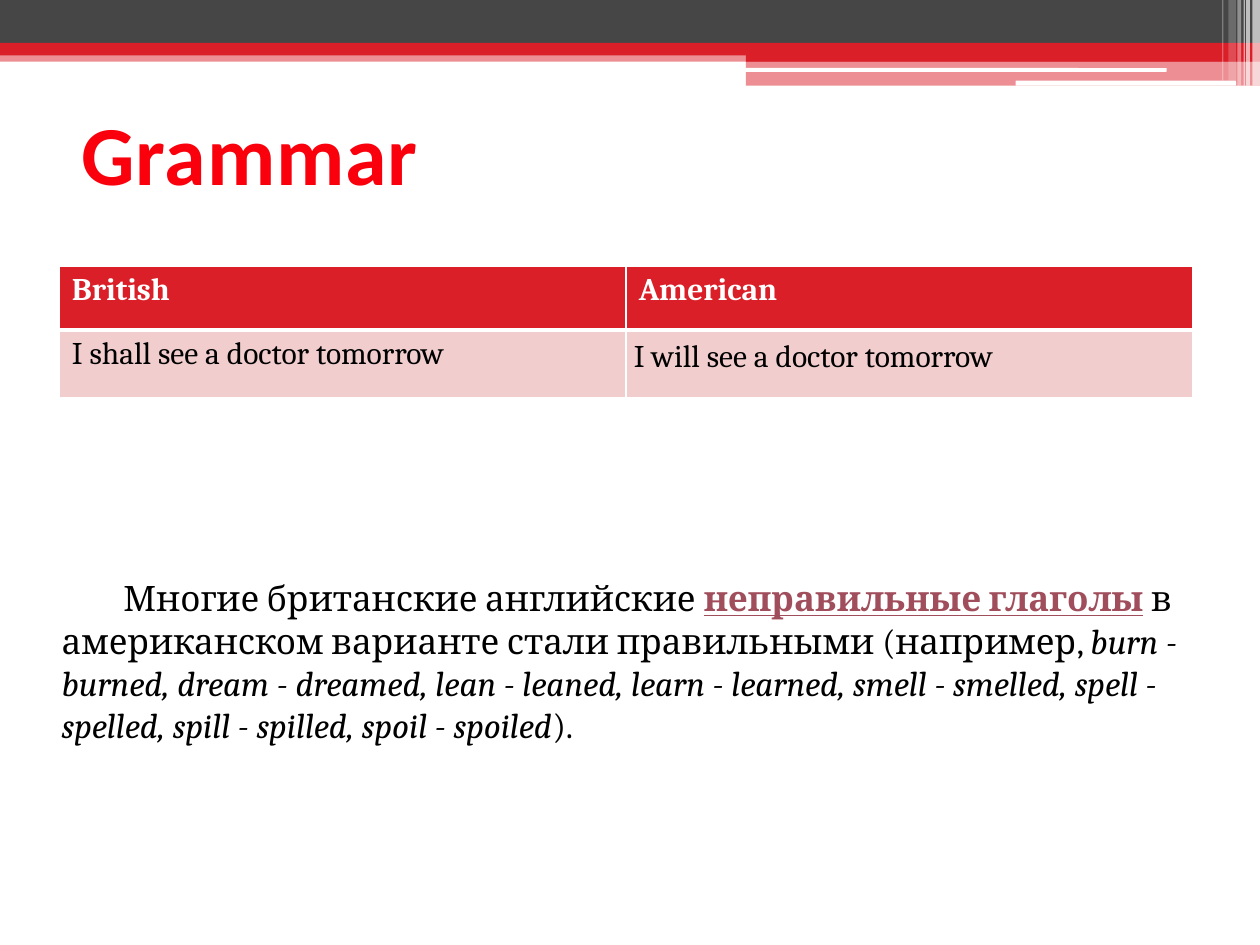
from pptx import Presentation, util as u
from pptx.dml.color import RGBColor
from pptx.enum import shapes, text
from pptx.oxml import parse_xml
from pptx.oxml.ns import nsdecls
from lxml import etree

RED, GREY, WHITE, BLACK, PINK = "DA1F28", "464646", "FFFFFF", "000000", "F1CDCD"
W, H = 10, 7.5

# Header bands: left, top, width, height, colour, opacity %
BANDS = [
    (0, 0.4, W, 0.09, RED, 50),
    (0, 0, W, 0.34, GREY, 100),
    (0, 0.34, W, 0.1, RED, 100),
    (5.92, 0.39, 4.08, 0.1, RED, 100),
    (5.92, 0.48, 4.08, 0.2, RED, 50),
]
# Rounded white rules: left, top, width, height
RULES = [(5.91, 0.54, 3.35, 0.03), (8.06, 0.64, 1.75, 0.04)]
# White stripes at the right edge: left, width, height, opacity %
STRIPES = [
    (9.94, 0.06, 0.68, 65), (9.89, 0.03, 0.68, 65), (9.87, 0.01, 0.68, 60),
    (9.82, 0.03, 0.68, 40), (9.75, 0.06, 0.64, 20), (9.7, 0.01, 0.64, 30),
]
TITLE = "Grammar"
ROWS = [
    ("British", "American"),
    ("I shall see a doctor tomorrow", "I will see a doctor tomorrow"),
]
# Runs of the note: text, colour, bold and underlined, italic
NOTE = [
    ("Многие британские английские ", BLACK, False, False),
    ("неправильные глаголы", "A14E5C", True, False),
    (" в американском варианте стали правильными (например, ", BLACK, False, False),
    ("burn - burned, dream - dreamed, lean - leaned, learn - learned, "
     "smell - smelled, spell - spelled, spill - spilled, spoil - spoiled",
     BLACK, False, True),
    (").", BLACK, False, False),
]

prs = Presentation()
prs.slide_width, prs.slide_height = u.Inches(W), u.Inches(H)
slide = prs.slides.add_slide(prs.slide_layouts[6])


def rgb(code):
    return RGBColor.from_string(code)


def box(*dims):
    return [u.Inches(d) for d in dims]


def bar(dims, code, alpha=100, kind=shapes.MSO_SHAPE.RECTANGLE):
    shape = slide.shapes.add_shape(kind, *box(*dims))
    shape.shadow.inherit = False
    shape.line.fill.background()
    shape.fill.solid()
    shape.fill.fore_color.rgb = rgb(code)
    if alpha < 100:
        color = shape.fill._xPr.find(".//{*}srgbClr")
        color.append(parse_xml(f'<a:alpha {nsdecls("a")} val="{alpha * 1000}"/>'))


def style(font, name, size, code, bold=False):
    font.name, font.size, font.bold = name, u.Pt(size), bold
    font.color.rgb = rgb(code)


def edge(cell, bottom):
    props = cell._tc.get_or_add_tcPr()
    for side in "LRTB":
        width = u.Pt(bottom if side == "B" else 1)
        props.append(parse_xml(
            f'<a:ln{side} {nsdecls("a")} w="{width}"><a:solidFill>'
            f'<a:srgbClr val="{WHITE}"/></a:solidFill></a:ln{side}>'))


def label(dims, anchor):
    frame = slide.shapes.add_textbox(*box(*dims)).text_frame
    frame.word_wrap = True
    frame.vertical_anchor = anchor
    return frame.paragraphs[0]


# Header decoration
for *dims, code, alpha in BANDS:
    bar(dims, code, alpha)
for dims in RULES:
    bar(dims, WHITE, kind=shapes.MSO_SHAPE.ROUNDED_RECTANGLE)
for left, wide, high, alpha in STRIPES:
    bar((left, 0, wide, high), WHITE, alpha)

# Title
head = label((0.55, 0.62, 9, 1.17), text.MSO_ANCHOR.MIDDLE)
head.text = TITLE
style(head.font, "Calibri", 48, "F9000C", True)
head.runs[0].font._element.set("spc", "50")

# Comparison table
table = slide.shapes.add_table(2, 2, *box(0.47, 2.11, 9, 1.05)).table
for row, high in zip(table.rows, (0.51, 0.54)):
    row.height = u.Inches(high)
for r, row in enumerate(ROWS):
    for c, words in enumerate(row):
        cell = table.cell(r, c)
        edge(cell, 1 if r else 3)
        cell.fill.solid()
        cell.fill.fore_color.rgb = rgb(PINK if r else RED)
        cell.text = words
        style(cell.text_frame.paragraphs[0].font, "Cambria", 18,
              BLACK if r else WHITE, r == 0)

# The last cell sits centred and close to its left edge
last = table.cell(1, 1)
last.vertical_anchor = text.MSO_ANCHOR.MIDDLE
last.margin_left = u.Inches(0.06)
last.margin_right = last.margin_top = last.margin_bottom = u.Inches(0.01)
last.text_frame.paragraphs[0].line_spacing = u.Pt(13.5)

# Note on irregular verbs
note = label((0.39, 4.53, 9.22, 1.45), text.MSO_ANCHOR.TOP)
note._p.get_or_add_pPr().set("indent", str(u.Inches(0.49)))
for words, code, strong, slant in NOTE:
    run = note.add_run()
    run.text = words
    style(run.font, "Cambria", 20, code, strong)
    run.font.underline, run.font.italic = strong, slant

prs.save("out.pptx")
